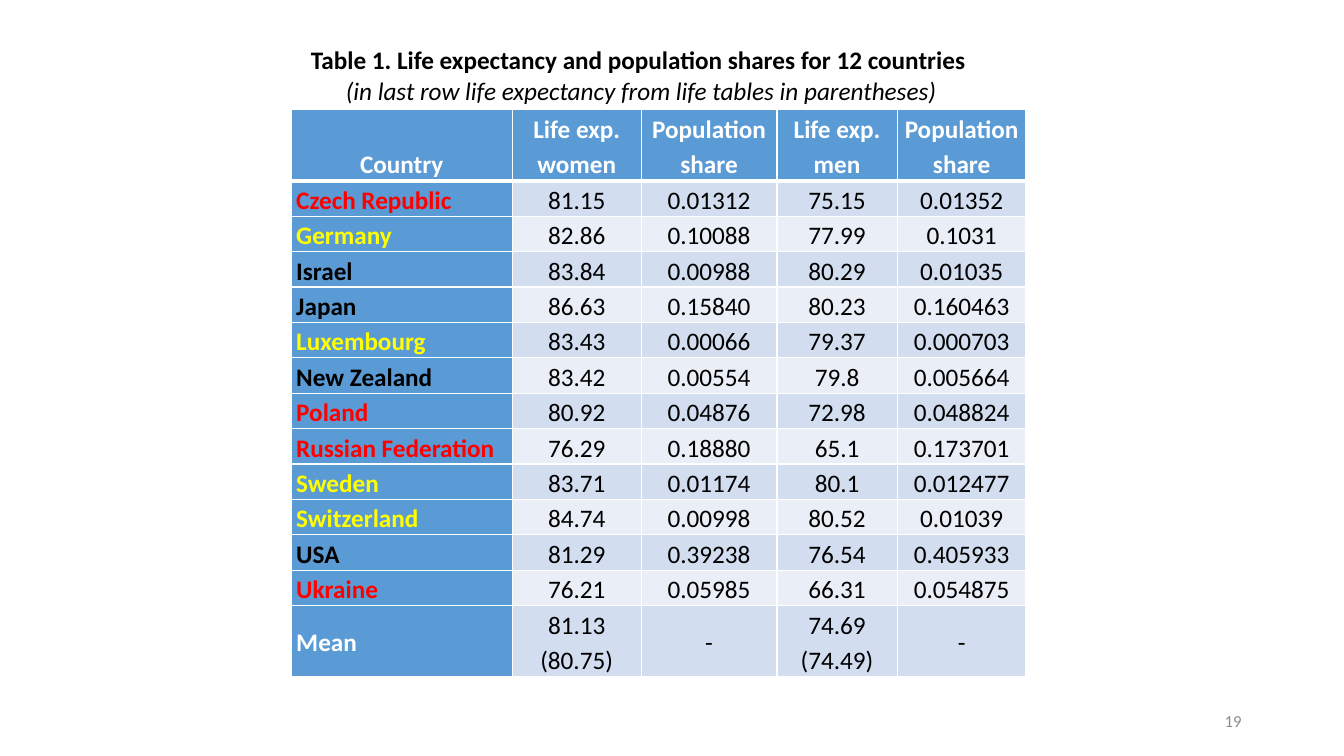
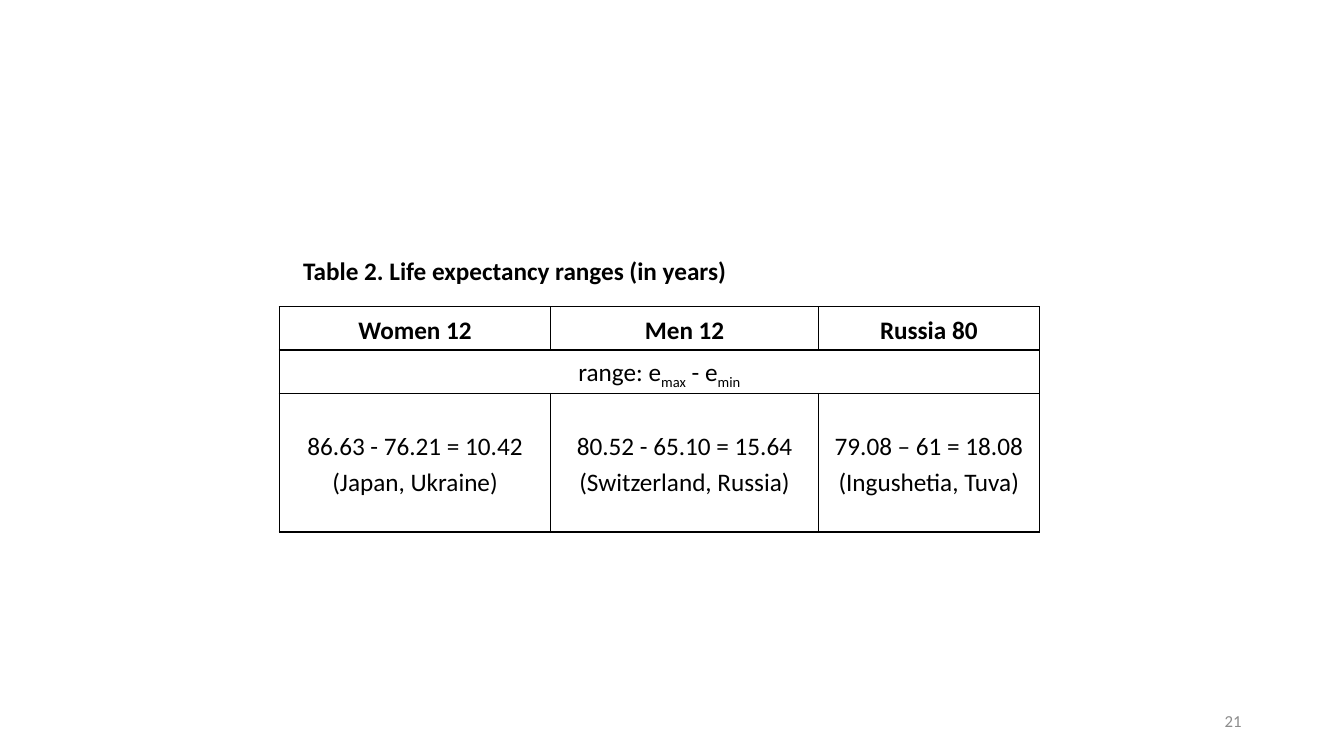
from collections import namedtuple
from dataclasses import dataclass

from lxml import etree
from pptx import Presentation
from pptx.dml import color
from pptx.enum import text
from pptx.oxml import ns
from pptx.util import Pt

Box = namedtuple("Box", "left top width height")


@dataclass(frozen=True)
class Theme:
    """Colours, type sizes and spacing shared by the slides."""
    font: str = "Calibri"
    body_size: float = 18
    number_size: float = 12
    line_spacing: float = 1.15
    cell_inset: float = 3.6
    rule: float = 1
    header_rule: float = 3
    black: str = "000000"
    white: str = "FFFFFF"
    gray: str = "8C8C8C"
    blue: str = "5B9BD5"
    bands: tuple = ("D2DEEF", "EAEFF7")
    red: str = "FF0000"
    yellow: str = "FFFF00"


@dataclass(frozen=True)
class Run:
    """A piece of text with its style."""
    text: str
    bold: bool = False
    italic: bool = False
    color: str = Theme.black
    size: float = Theme.body_size
    subscript: bool = False


THEME = Theme()
SLIDE_SIZE = (960, 540)
NUMBER_BOX = Box(678, 500, 216, 29)
LEFT, CENTER, RIGHT = text.PP_ALIGN.LEFT, text.PP_ALIGN.CENTER, text.PP_ALIGN.RIGHT
MIDDLE, BOTTOM = text.MSO_ANCHOR.MIDDLE, text.MSO_ANCHOR.BOTTOM

COUNTRY_HEADERS = ["Country", "Life exp.\nwomen", "Population share",
                   "Life exp.\nmen", "Population share"]
COUNTRY_ROWS = [
    ("Czech Republic", THEME.red, "81.15", "0.01312", "75.15", "0.01352"),
    ("Germany", THEME.yellow, "82.86", "0.10088", "77.99", "0.1031"),
    ("Israel", THEME.black, "83.84", "0.00988", "80.29", "0.01035"),
    ("Japan", THEME.black, "86.63", "0.15840", "80.23", "0.160463"),
    ("Luxembourg", THEME.yellow, "83.43", "0.00066", "79.37", "0.000703"),
    ("New Zealand", THEME.black, "83.42", "0.00554", "79.8", "0.005664"),
    ("Poland", THEME.red, "80.92", "0.04876", "72.98", "0.048824"),
    ("Russian Federation", THEME.red, "76.29", "0.18880", "65.1", "0.173701"),
    ("Sweden", THEME.yellow, "83.71", "0.01174", "80.1", "0.012477"),
    ("Switzerland", THEME.yellow, "84.74", "0.00998", "80.52", "0.01039"),
    ("USA", THEME.black, "81.29", "0.39238", "76.54", "0.405933"),
    ("Ukraine", THEME.red, "76.21", "0.05985", "66.31", "0.054875"),
    ("Mean", THEME.white, "81.13\n(80.75)", "-", "74.69\n(74.49)", "-"),
]
RANGE_HEADERS = ["Women 12", "Men 12", "Russia 80"]
RANGE_FORMULA = [Run("range: e"), Run("max", subscript=True),
                 Run(" - e"), Run("min", subscript=True)]
RANGE_RESULTS = ["86.63 - 76.21 = 10.42\n(Japan, Ukraine)",
                 "80.52 - 65.10 = 15.64\n(Switzerland, Russia)",
                 "79.08 – 61 = 18.08\n(Ingushetia, Tuva)"]


def styled_lines(content, **style):
    """Turn each line of a string into a paragraph of one run."""
    return [[Run(line, **style)] for line in content.split("\n")]


def write_paragraphs(frame, paragraphs, align, spacing=None):
    """Write lists of runs into a text frame, one list a paragraph."""
    for index, runs in enumerate(paragraphs):
        paragraph = frame.add_paragraph() if index else frame.paragraphs[0]
        paragraph.alignment = align
        if spacing:
            paragraph.line_spacing = spacing
        for item in runs:
            run = paragraph.add_run()
            run.text = item.text
            run.font.name = THEME.font
            run.font.size = Pt(item.size)
            run.font.bold = item.bold
            run.font.italic = item.italic
            run.font.color.rgb = color.RGBColor.from_string(item.color)
            if item.subscript:
                run._r.get_or_add_rPr().set("baseline", "-25000")


def add_text(slide, box, paragraphs, align, wrap=True):
    """Place a vertically centred text box."""
    shape = slide.shapes.add_textbox(*map(Pt, box))
    frame = shape.text_frame
    frame.word_wrap = wrap
    frame.vertical_anchor = MIDDLE
    write_paragraphs(frame, paragraphs, align)


def add_slide_number(slide, number):
    """Place the slide number at the lower right."""
    run = Run(number, color=THEME.gray, size=THEME.number_size)
    add_text(slide, NUMBER_BOX, [[run]], RIGHT)


def add_plain_table(slide, box, column_widths, row_heights):
    """Add a table without banding and set its grid."""
    frame = slide.shapes.add_table(
        len(row_heights), len(column_widths), *map(Pt, box))
    table = frame.table
    table.first_row = table.horz_banding = False
    for column, width in zip(table.columns, column_widths):
        column.width = Pt(width)
    for row, height in zip(table.rows, row_heights):
        row.height = Pt(height)
    return table


def style_cell(cell, line, fill=None, anchor=MIDDLE, top=THEME.rule, bottom=THEME.rule):
    """Set the margins, anchor, borders and fill of a cell."""
    cell.margin_left = cell.margin_right = Pt(THEME.cell_inset)
    cell.margin_top = cell.margin_bottom = 0
    cell.vertical_anchor = anchor
    properties = cell._tc.get_or_add_tcPr()
    sides = {"a:lnL": THEME.rule, "a:lnR": THEME.rule, "a:lnT": top, "a:lnB": bottom}
    for tag, width in sides.items():
        border = etree.SubElement(properties, ns.qn(tag), w=str(Pt(width)))
        solid = etree.SubElement(border, ns.qn("a:solidFill"))
        etree.SubElement(solid, ns.qn("a:srgbClr"), val=line)
    if fill:
        cell.fill.solid()
        cell.fill.fore_color.rgb = color.RGBColor.from_string(fill)
    else:
        cell.fill.background()


def fill_cell(cell, paragraphs, align=CENTER):
    """Write paragraphs into a cell with the table line spacing."""
    write_paragraphs(cell.text_frame, paragraphs, align, THEME.line_spacing)


def add_country_table(slide, box):
    """Build the banded table of countries inside a box."""
    single, double = 25.3, 50.6
    heights = [double] + [single] * (len(COUNTRY_ROWS) - 1) + [double]
    table = add_plain_table(slide, box, [158, 92, 97, 86, 92], heights)
    for column, header in enumerate(COUNTRY_HEADERS):
        cell = table.cell(0, column)
        style_cell(cell, THEME.white, THEME.blue, BOTTOM, bottom=THEME.header_rule)
        fill_cell(cell, styled_lines(header, bold=True, color=THEME.white))
    for index, (country, name_color, *values) in enumerate(COUNTRY_ROWS):
        top = THEME.rule if index else THEME.header_rule
        name_cell = table.cell(index + 1, 0)
        style_cell(name_cell, THEME.white, THEME.blue, top=top)
        fill_cell(name_cell, styled_lines(country, bold=True, color=name_color), LEFT)
        for column, value in enumerate(values, 1):
            cell = table.cell(index + 1, column)
            style_cell(cell, THEME.white, THEME.bands[index % 2], top=top)
            fill_cell(cell, styled_lines(value))


def add_range_table(slide, box):
    """Build the ruled table of ranges inside a box."""
    table = add_plain_table(slide, box, [194, 191, 158], [31, 31, 99])
    for cell in table.iter_cells():
        style_cell(cell, THEME.black)
    table.cell(1, 0).merge(table.cell(1, 2))
    fill_cell(table.cell(1, 0), [RANGE_FORMULA])
    for column, (header, result) in enumerate(zip(RANGE_HEADERS, RANGE_RESULTS)):
        fill_cell(table.cell(0, column), styled_lines(header, bold=True))
        fill_cell(table.cell(2, column), styled_lines(result))


def build_country_slide(slide):
    """Place the caption, country table and number."""
    add_country_table(slide, Box(208, 78.5, 525, 404.8))
    caption = [
        [Run("Table 1. Life expectancy and population shares for 12 countries", bold=True)],
        [Run(" (in last row life expectancy from life tables in parentheses)", italic=True)],
    ]
    add_text(slide, Box(213, 28, 486, 51), caption, CENTER, wrap=False)
    add_slide_number(slide, "19")


def build_range_slide(slide):
    """Place the caption, range table and number."""
    add_range_table(slide, Box(199.5, 219, 543, 161))
    caption = styled_lines("Table 2. Life expectancy ranges (in years)", bold=True)
    add_text(slide, Box(209.5, 178.5, 413, 29), caption, LEFT)
    add_slide_number(slide, "21")


def main():
    """Build and save the presentation."""
    presentation = Presentation()
    presentation.slide_width, presentation.slide_height = map(Pt, SLIDE_SIZE)
    blank = presentation.slide_layouts[6]
    for build in (build_country_slide, build_range_slide):
        build(presentation.slides.add_slide(blank))
    presentation.save("out.pptx")


if __name__ == "__main__":
    main()
